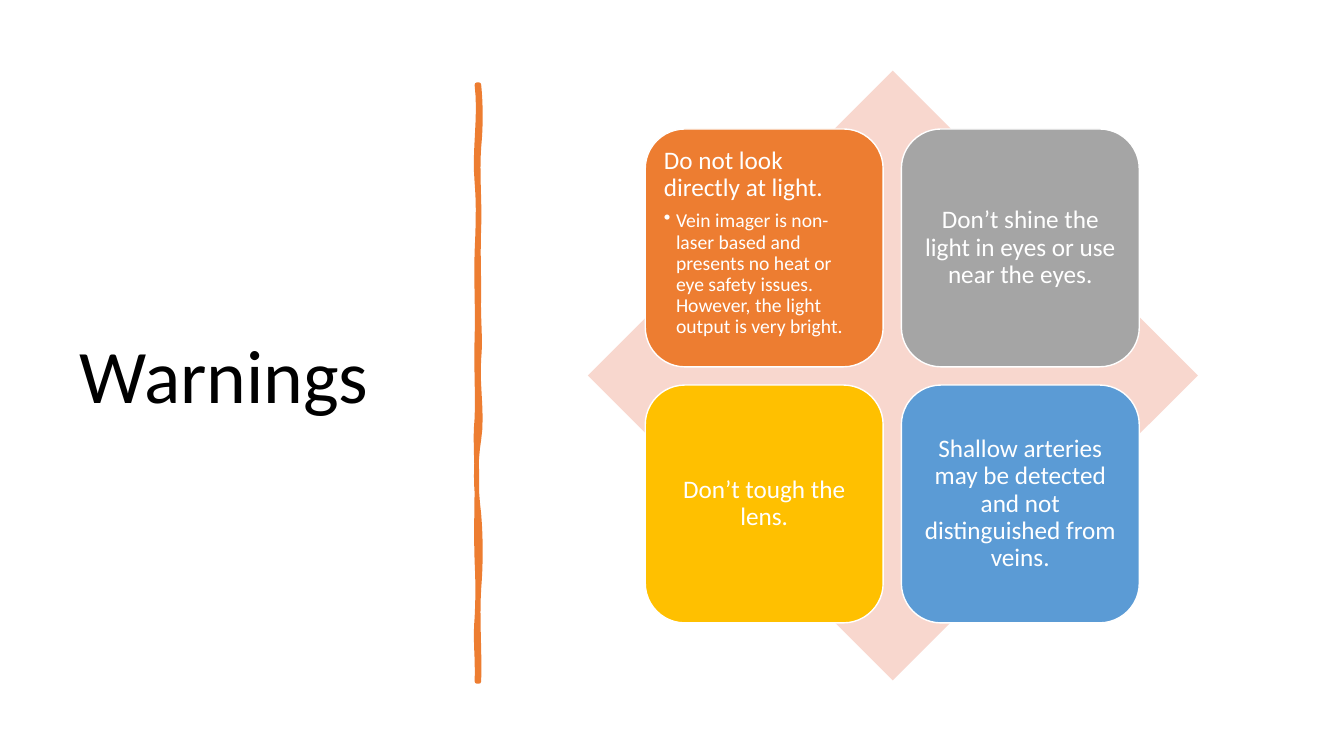
from lxml import etree
from pptx import Presentation
from pptx.dml.color import RGBColor
from pptx.enum.shapes import MSO_SHAPE as Shape
from pptx.enum.text import MSO_ANCHOR as Anchor, PP_ALIGN as Align
from pptx.oxml.ns import qn
from pptx.util import Inches, Pt

FONT = "Calibri"
BLACK = RGBColor(0x00, 0x00, 0x00)
WHITE = RGBColor(0xFF, 0xFF, 0xFF)
ORANGE = RGBColor(0xED, 0x7D, 0x31)
GRAY = RGBColor(0xA5, 0xA5, 0xA5)
GOLD = RGBColor(0xFF, 0xC0, 0x00)
BLUE = RGBColor(0x5B, 0x9B, 0xD5)
PINK = RGBColor(0xF8, 0xD7, 0xCE)

CARD_LEFT, CARD_TOP, CARD_SIZE, CARD_PITCH = 6.4, 1.28, 2.36, 2.54
CARDS = [
    (ORANGE, "Do not look directly at light.",
     "Vein imager is non-laser based and presents no heat or eye safety "
     "issues. However, the light output is very bright."),
    (GRAY, "Don’t shine the light in eyes or use near the eyes.", None),
    (GOLD, "Don’t tough the lens.", None),
    (BLUE, "Shallow arteries may be detected and not distinguished from veins.", None),
]

# Edges of the hand-drawn rule: end of each wave, then its two sideways bends
RULE_TOP, RULE_RIGHT, RULE_LEFT = 0.84, 4.75, 4.73
RIGHT_WAVES = [
    (1.46, 0.02, 0.02), (2.26, -0.02, 0.01), (2.94, -0.01, 0), (3.56, -0.01, 0.02),
    (4.36, -0.02, 0.04), (5.1, -0.04, -0.03), (5.84, 0.02, 0.02), (6.76, -0.02, 0.01),
]
LEFT_WAVES = [
    (6.13, 0.01, -0.02), (5.57, 0.01, 0.01), (4.77, -0.01, 0), (4.15, 0, -0.02),
    (3.35, 0.01, -0.01), (2.5, 0.01, -0.01), (1.81, 0.01, 0.02), (0.84, -0.03, 0.04),
]


def add_text(para, text, size, color):
    para.line_spacing = 0.9
    span = para.add_run()
    span.text = text
    span.font.name = FONT
    span.font.size = Pt(size)
    span.font.color.rgb = color


def add_bullet(para, indent, size):
    props = para._p.get_or_add_pPr()
    props.set("marL", str(Inches(indent)))
    props.set("indent", str(-Inches(indent)))
    etree.SubElement(props, qn("a:buChar")).set("char", "•")
    para.font.name = FONT
    para.font.size = Pt(size)


def add_title(page, text):
    box = page.shapes.add_textbox(Inches(0.69), Inches(0.7), Inches(3.74), Inches(6.11))
    frame = box.text_frame
    frame.word_wrap = True
    frame.vertical_anchor = Anchor.MIDDLE
    add_text(frame.paragraphs[0], text, 54, BLACK)


def wave_points(x, start, waves, steps=8):
    """Points along one edge, each wave bent as a cubic curve."""
    points = []
    for end, first, second in waves:
        for step in range(1, steps + 1):
            t = step / steps
            bend = 3 * t * (1 - t) * ((1 - t) * first + t * second)
            points.append((Inches(x + bend), Inches(start + t * (end - start))))
        start = end
    return points


def add_wavy_rule(page):
    bottom = RIGHT_WAVES[-1][0]
    points = wave_points(RULE_RIGHT, RULE_TOP, RIGHT_WAVES)
    points.append((Inches(RULE_LEFT), Inches(bottom)))
    points += wave_points(RULE_LEFT, bottom, LEFT_WAVES)
    builder = page.shapes.build_freeform(Inches(RULE_RIGHT), Inches(RULE_TOP))
    builder.add_line_segments(points, close=True)
    rule = builder.convert_to_shape()
    rule.shadow.inherit = False
    rule.fill.solid()
    rule.fill.fore_color.rgb = ORANGE
    rule.line.color.rgb = ORANGE
    rule.line.width = Pt(3.25)
    etree.SubElement(rule.line._get_or_add_ln(), qn("a:round"))


def add_block(page, kind, left, top, size, color):
    block = page.shapes.add_shape(
        kind, Inches(left), Inches(top), Inches(size), Inches(size))
    block.shadow.inherit = False
    block.fill.solid()
    block.fill.fore_color.rgb = color
    return block


def add_card(page, index, color, heading, detail):
    row, column = divmod(index, 2)
    card = add_block(page, Shape.ROUNDED_RECTANGLE, CARD_LEFT + column * CARD_PITCH,
                     CARD_TOP + row * CARD_PITCH, CARD_SIZE, color)
    card.line.color.rgb = WHITE
    card.line.width = Pt(1)
    frame = card.text_frame
    frame.word_wrap = True
    frame.margin_left = frame.margin_top = frame.margin_bottom = Inches(0.07)
    frame.margin_right = Inches(0.1 if detail else 0.07)
    frame.vertical_anchor = Anchor.TOP if detail else Anchor.MIDDLE
    para = frame.paragraphs[0]
    para.alignment = Align.LEFT if detail else Align.CENTER
    add_text(para, heading, 18, WHITE)
    if detail:
        para.space_after = Pt(6.3)
        para = frame.add_paragraph()
        para.level = 1
        para.alignment = Align.LEFT
        add_bullet(para, 0.12, 14)
        add_text(para, detail, 14, WHITE)


def main():
    deck = Presentation()
    deck.slide_width, deck.slide_height = Inches(13.33), Inches(7.5)
    page = deck.slides.add_slide(deck.slide_layouts[6])

    # Title and rule
    add_title(page, "Warnings")
    add_wavy_rule(page)

    # Diamond behind the four warning cards
    diamond = add_block(page, Shape.DIAMOND, 5.83, 0.7, 6.05, PINK)
    diamond.line.fill.background()
    for index, (color, heading, detail) in enumerate(CARDS):
        add_card(page, index, color, heading, detail)

    deck.save("out.pptx")


if __name__ == "__main__":
    main()
